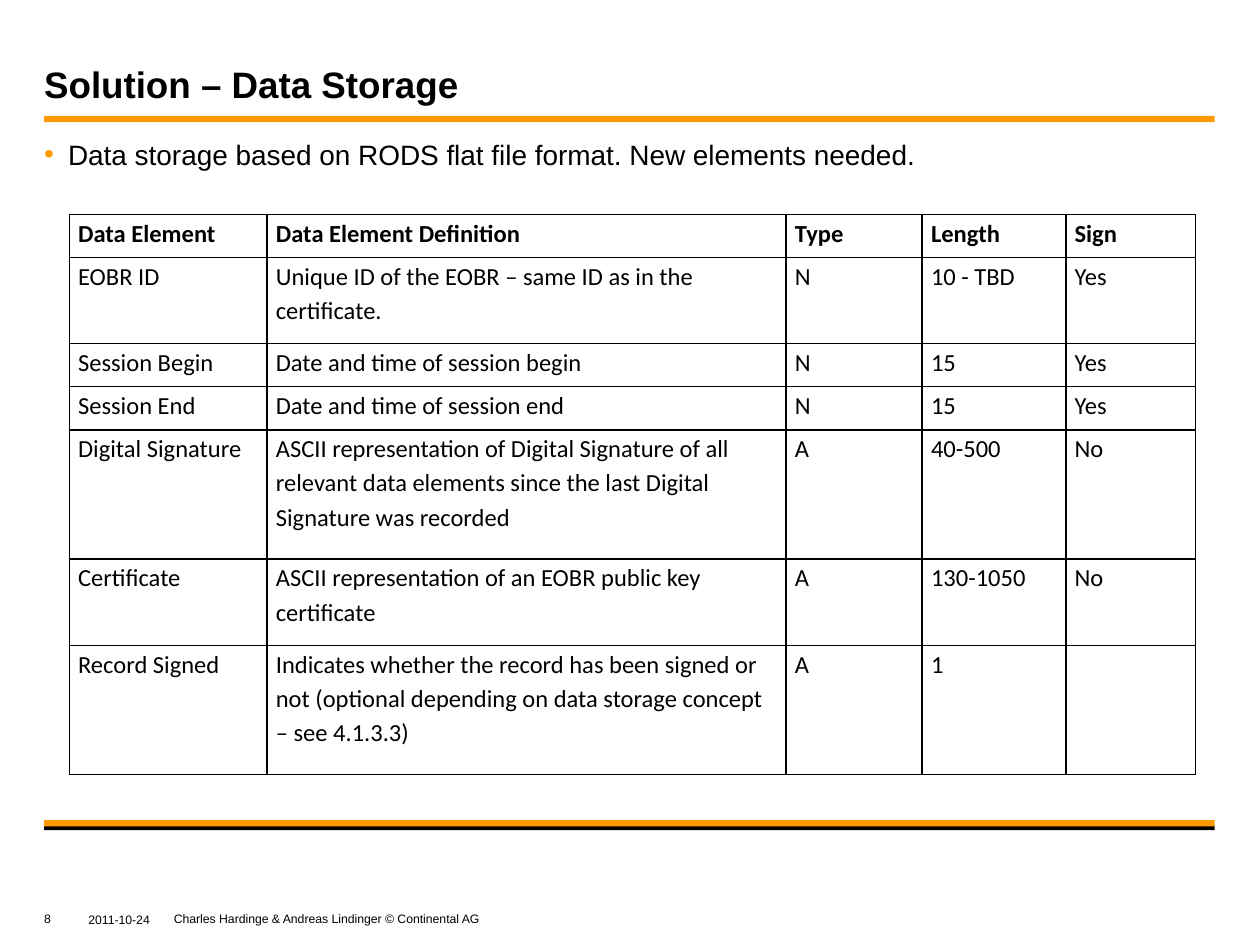
from lxml import etree
from pptx import Presentation
from pptx import util as u
from pptx.dml.color import RGBColor
from pptx.enum import shapes, text
from pptx.oxml import ns

WIDTH, HEIGHT = u.Inches(10), u.Inches(7.5)
COLORS = {"ink": "000000", "accent": "FF9900", "paper": "FFFFFF"}
LEFT, SPAN = 3.5, 92.9
COLUMN_SHARES = [15.7, 41.2, 10.8, 11.4, 10.3]
ROW_UNITS = [1, 2, 1, 1, 3, 2, 3]
TABLE_HEIGHT = 59.33
ELEMENTS = [
    ["Data Element", "Data Element Definition", "Type", "Length", "Sign"],
    ["EOBR ID", "Unique ID of the EOBR – same ID as in the certificate.",
     "N", "10 - TBD", "Yes"],
    ["Session Begin", "Date and time of session begin", "N", "15", "Yes"],
    ["Session End", "Date and time of session end", "N", "15", "Yes"],
    ["Digital Signature",
     "ASCII representation of Digital Signature of all relevant data elements "
     "since the last Digital Signature was recorded", "A", "40-500", "No"],
    ["Certificate", "ASCII representation of an EOBR public key certificate",
     "A", "130-1050", "No"],
    ["Record Signed",
     "Indicates whether the record has been signed or not (optional depending "
     "on data storage concept – see 4.1.3.3)", "A", "1", ""],
]


def color(name):
    return RGBColor.from_string(COLORS[name])


def across(percent):
    return round(WIDTH * percent / 100)


def down(percent):
    return round(HEIGHT * percent / 100)


def place(left, top, width, height):
    return across(left), down(top), across(width), down(height)


def element(parent, tag, **attributes):
    return etree.SubElement(parent, ns.qn(tag), attributes)


def style(para, size, name="Arial", bold=False):
    para.font.size = u.Pt(size)
    para.font.name = name
    para.font.bold = bold
    para.font.color.rgb = color("ink")


def add_bar(page, top, height, fill):
    bar = page.shapes.add_shape(shapes.MSO_SHAPE.RECTANGLE,
                                *place(LEFT, top, SPAN, height))
    bar.shadow.inherit = False
    bar.fill.solid()
    bar.fill.fore_color.rgb = color(fill)
    bar.line.fill.background()


def add_text(page, area, words, anchor, wrap=True, pad=0):
    box = page.shapes.add_textbox(*place(*area))
    frame = box.text_frame
    frame.word_wrap = wrap
    frame.vertical_anchor = anchor
    frame.margin_left = frame.margin_right = 0
    frame.margin_top = frame.margin_bottom = u.Inches(pad)
    para = frame.paragraphs[0]
    para.text = words
    return para


def add_title(page, words):
    para = add_text(page, (LEFT, 1.73, SPAN, 9.47), words,
                    text.MSO_ANCHOR.BOTTOM)
    style(para, 21, bold=True)


def add_bullet(page, words):
    para = add_text(page, (LEFT, 14.27, SPAN, 71.33), words,
                    text.MSO_ANCHOR.TOP, pad=0.02)
    para.space_after = u.Pt(12)
    properties = para._p.get_or_add_pPr()
    indent = u.Inches(0.19)
    properties.set("marL", str(indent))
    properties.set("indent", str(-indent))
    element(element(properties, "a:buClr"), "a:srgbClr", val=COLORS["accent"])
    element(properties, "a:buFont", typeface="Arial")
    element(properties, "a:buChar", char="•")
    style(para, 16)


def add_footer(page, left, top, width, words, align=text.PP_ALIGN.LEFT):
    para = add_text(page, (left, top, width, 2.13), words,
                    text.MSO_ANCHOR.MIDDLE, wrap=False)
    para.alignment = align
    style(para, 7)


def add_borders(cell):
    properties = cell._tc.get_or_add_tcPr()
    for side in ("a:lnL", "a:lnR", "a:lnT", "a:lnB"):
        line = element(properties, side, w=str(u.Pt(1)))
        element(element(line, "a:solidFill"), "a:srgbClr", val=COLORS["ink"])


def fill_cell(cell, words, header, filled):
    cell.margin_left = cell.margin_right = u.Inches(0.07)
    cell.margin_top = cell.margin_bottom = 0
    add_borders(cell)
    if filled:
        cell.fill.solid()
        cell.fill.fore_color.rgb = color("paper")
    else:
        cell.fill.background()
    para = cell.text_frame.paragraphs[0]
    para.text = words
    para.line_spacing = 1.15
    style(para, 14, "Calibri", header)


def add_elements_table(page):
    area = place(5.5, 22.67, sum(COLUMN_SHARES), TABLE_HEIGHT)
    table = page.shapes.add_table(len(ELEMENTS), len(COLUMN_SHARES), *area).table
    table.first_row = table.horz_banding = False
    for column, share in zip(table.columns, COLUMN_SHARES):
        column.width = across(share)
    last = len(ELEMENTS) - 1
    for index, (row, units) in enumerate(zip(table.rows, ROW_UNITS)):
        row.height = down(TABLE_HEIGHT * units / sum(ROW_UNITS))
        for cell, words in zip(row.cells, ELEMENTS[index]):
            fill_cell(cell, words, index == 0, index == last)


def main():
    deck = Presentation()
    deck.slide_width, deck.slide_height = WIDTH, HEIGHT
    page = deck.slides.add_slide(deck.slide_layouts[6])
    add_bar(page, 87.33, 0.53, "ink")
    add_bar(page, 86.8, 0.67, "accent")
    add_bar(page, 12.27, 0.67, "accent")
    add_bullet(page, "Data storage based on RODS flat file format. "
                     "New elements needed.")
    add_title(page, "Solution – Data Storage")
    add_footer(page, 6.7, 96.27, 5.5, "2011-10-24", text.PP_ALIGN.CENTER)
    add_footer(page, LEFT, 96.13, 2.4, "8")
    add_footer(page, 13.8, 96.13, 45.7,
               "Charles Hardinge & Andreas Lindinger © Continental AG")
    add_elements_table(page)
    deck.save("out.pptx")


if __name__ == "__main__":
    main()
